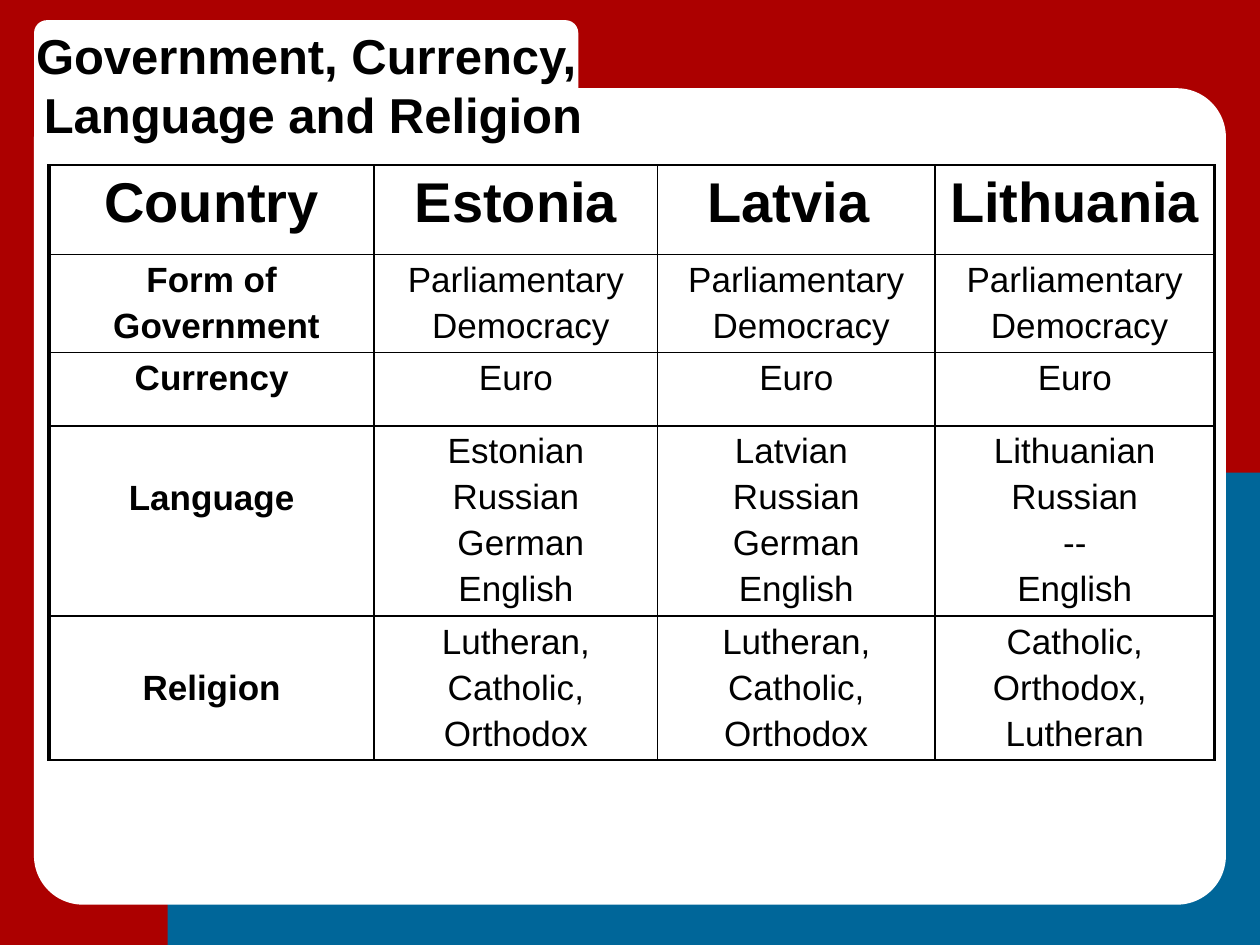
"""Build a slide comparing government, currency, language and religion in the Baltic states."""
from lxml import etree
from pptx import Presentation
from pptx.dml import color
from pptx.enum import shapes, text
from pptx.oxml import ns
from pptx.util import Inches, Pt

COLOURS = {"red": "AC0000", "blue": "006699", "panel": "FFFFFF", "ink": "000000"}
FONT = "Arial"
COLUMNS = [2.58, 2.25, 2.2, 2.22]
ROWS = [0.71, 0.78, 0.58, 1.51, 1.13]
LINE_DROP = 0.37
DEMOCRACY = "Parliamentary\n Democracy"
FACTS = [
    ["Country", "Estonia", "Latvia ", "Lithuania"],
    ["Form of\n Government"] + [DEMOCRACY] * 3,
    ["Currency"] + ["Euro"] * 3,
    ["Language", "Estonian\nRussian\n German\nEnglish",
     "Latvian \nRussian\nGerman\nEnglish", "Lithuanian\nRussian\n--\nEnglish"],
    ["Religion"] + ["Lutheran,\nCatholic,\nOrthodox"] * 2 + ["Catholic,\nOrthodox, \nLutheran"],
]


def write(frame, words, size, bold, gap):
    frame.text = words
    for para in frame.paragraphs:
        para.alignment = text.PP_ALIGN.CENTER
        para.space_before = Pt(gap)
        for span in para.runs:
            span.font.name = FONT
            span.font.size = Pt(size)
            span.font.bold = bold
            span.font.color.rgb = color.RGBColor.from_string(COLOURS["ink"])


def add_border(cell, side, width):
    properties = cell._tc.get_or_add_tcPr()
    line = etree.SubElement(properties, ns.qn(f"a:{side}"), w=str(Pt(width)))
    fill = etree.SubElement(line, ns.qn("a:solidFill"))
    etree.SubElement(fill, ns.qn("a:srgbClr"), val=COLOURS["ink"])


deck = Presentation()
deck.slide_width, deck.slide_height = Inches(10), Inches(7.5)
page = deck.slides.add_slide(deck.slide_layouts[5])

TAB_LEFT, TAB_TOP, TAB_WIDTH, TAB_HEIGHT = 0.27, 0.16, 4.32, 1.02
TITLE_OVERHANG = 0.1
RECTANGLE = shapes.MSO_SHAPE.RECTANGLE
ROUNDED = shapes.MSO_SHAPE.ROUNDED_RECTANGLE
for kind, area, fill, corner in [
    (RECTANGLE, (0, 0, 10, 7.5), "red", None),
    (RECTANGLE, (1.33, 3.75, 8.67, 3.75), "blue", None),
    (ROUNDED, (TAB_LEFT, 0.7, 9.46, 6.48), "panel", 0.06),
    (ROUNDED, (TAB_LEFT, TAB_TOP, TAB_WIDTH, TAB_HEIGHT), "panel", 0.1),
]:
    box = page.shapes.add_shape(kind, *map(Inches, area))
    box.shadow.inherit = False
    box.fill.solid()
    box.fill.fore_color.rgb = color.RGBColor.from_string(COLOURS[fill])
    box.line.fill.background()
    if corner:
        box.adjustments[0] = corner

title = page.shapes.title
title.left, title.top = Inches(TAB_LEFT - TITLE_OVERHANG), Inches(TAB_TOP)
title.width, title.height = Inches(TAB_WIDTH + 2 * TITLE_OVERHANG), Inches(TAB_HEIGHT)
frame = title.text_frame
write(frame, "Government, Currency,\n Language and Religion", 28, True, 0)
frame.margin_left = frame.margin_right = 0
frame.word_wrap = True
frame.auto_size = text.MSO_AUTO_SIZE.NONE
frame.vertical_anchor = text.MSO_ANCHOR.MIDDLE
page.shapes._spTree.append(title._element)

table = page.shapes.add_table(
    len(ROWS), len(COLUMNS), Inches(0.39), Inches(1.31),
    Inches(sum(COLUMNS)), Inches(sum(ROWS))).table
table.first_row = table.horz_banding = False
for column, width in zip(table.columns, COLUMNS):
    column.width = Inches(width)
for row, height in zip(table.rows, ROWS):
    row.height = Inches(height)

last = len(COLUMNS) - 1
for r, facts in enumerate(FACTS):
    for c, words in enumerate(facts):
        cell = table.cell(r, c)
        heading = r == 0 or c == 0
        write(cell.text_frame, words, 32 if r == 0 else 20, heading, 4)
        if words in ("Language", "Religion"):
            cell.margin_top = Inches(0.05 + LINE_DROP)
        add_border(cell, "lnL", 2.25 if c == 0 else 1)
        add_border(cell, "lnR", 2.25 if c == last else 1)
        add_border(cell, "lnT", 1)
        add_border(cell, "lnB", 1)
        cell.fill.background()

deck.save("out.pptx")
